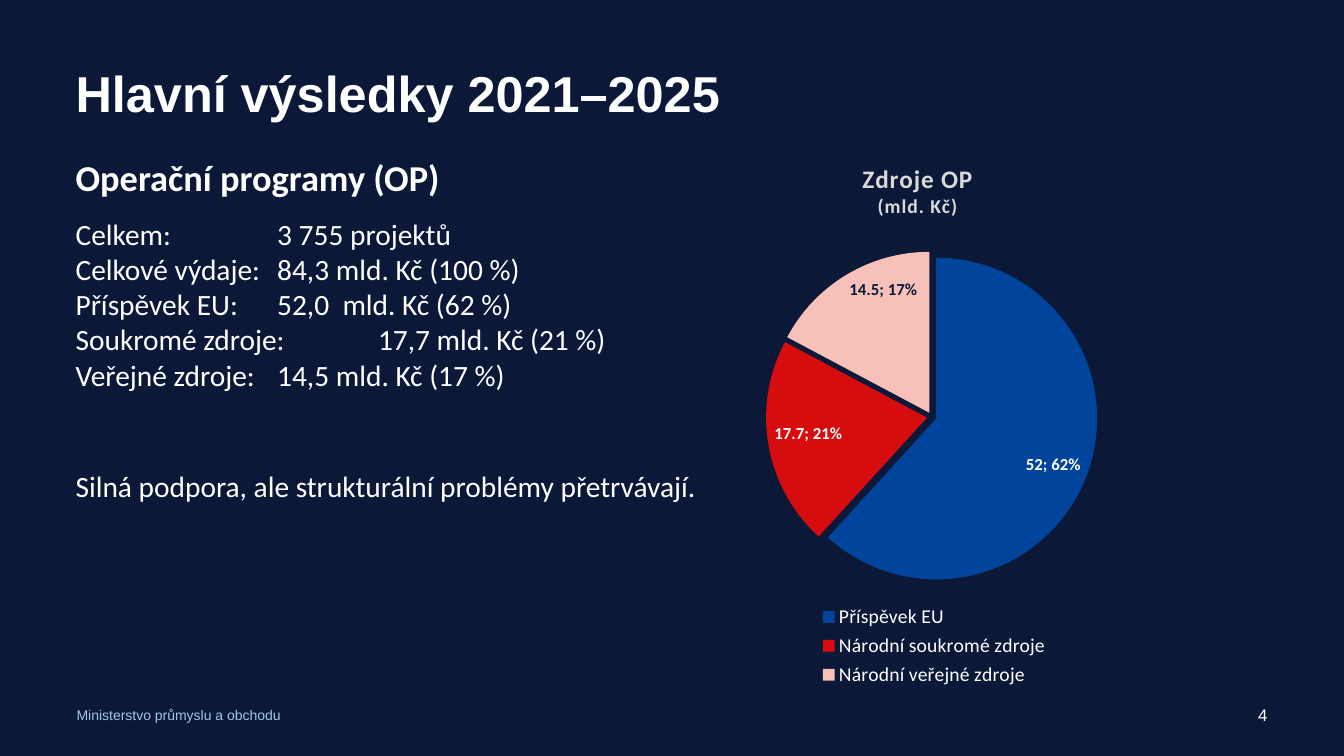
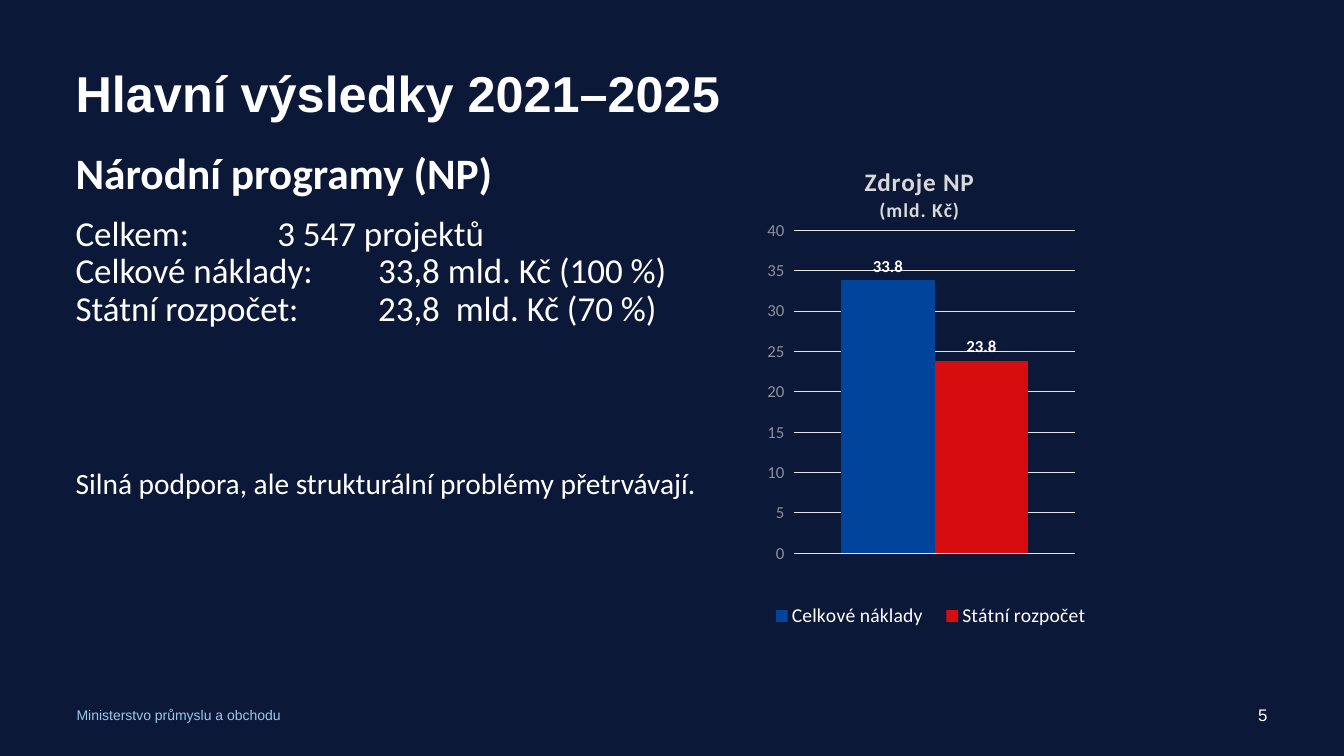
from lxml import etree
from pptx import Presentation
from pptx.chart.data import CategoryChartData
from pptx.dml.color import RGBColor
from pptx.enum.chart import (XL_CHART_TYPE, XL_LABEL_POSITION,
                             XL_LEGEND_POSITION, XL_TICK_MARK)
from pptx.enum.text import MSO_ANCHOR, PP_ALIGN
from pptx.oxml.ns import qn
from pptx.util import Inches, Pt

NAVY = RGBColor(0x0C, 0x18, 0x38)
WHITE = RGBColor(0xFF, 0xFF, 0xFF)
SKY = RGBColor(0x9D, 0xC8, 0xE9)
BLUE = RGBColor(0x00, 0x45, 0x9B)
RED = RGBColor(0xD7, 0x0C, 0x0F)
PINK = RGBColor(0xF7, 0xC1, 0xB9)
TITLE_GREY = RGBColor(0xD9, 0xD9, 0xD9)
AXIS_GREY = RGBColor(0x8D, 0x91, 0x9B)
GRID_GREY = RGBColor(0xE5, 0xE6, 0xE8)
TEXT_GREY = RGBColor(0x54, 0x58, 0x60)

CONCLUSION = "Silná podpora, ale strukturální problémy přetrvávají."
SLIDES = [
    dict(number=4, box=(0.75, 1.54, 6.53, 5.28), spacing=1.0,
         heading="Operační programy (OP)", heading_size=26, row_size=21, gap=54,
         rows=["Celkem: \t3 755 projektů",
               "Celkové výdaje: \t84,3 mld. Kč (100 %)",
               "Příspěvek EU: \t52,0  mld. Kč (62 %)",
               "Soukromé zdroje: \t17,7 mld. Kč (21 %)",
               "Veřejné zdroje: \t14,5 mld. Kč (17 %)"],
         kind=XL_CHART_TYPE.PIE, chart_at=(6.95, 1.41, 4.63, 5.68),
         chart_title="Zdroje OP",
         categories=["Příspěvek EU", "Národní soukromé zdroje",
                     "Národní veřejné zdroje"],
         series=[("Series 1", [52, 17.7, 14.5])],
         title_layout=(0.34, 0.03), plot_layout=(0.14, 0.17, 0.71, 0.62),
         legend_layout=(0.24, 0.8, 0.52, 0.16)),
    dict(number=5, box=(0.75, 1.51, 6.45, 3.75), spacing=0.9,
         heading="Národní programy (NP)", heading_size=31, row_size=25, gap=100,
         rows=["Celkem: \t3 547 projektů",
               "Celkové náklady: \t33,8 mld. Kč (100 %)",
               "Státní rozpočet: \t23,8  mld. Kč (70 %)"],
         kind=XL_CHART_TYPE.COLUMN_CLUSTERED, chart_at=(7.33, 1.51, 3.92, 5.17),
         chart_title="Zdroje NP", categories=["1"],
         series=[("Celkové náklady", [33.8]), ("Státní rozpočet", [23.8])],
         title_layout=(0.31, 0.02), plot_layout=(0.14, 0.15, 0.71, 0.62),
         legend_layout=(0.05, 0.86, 0.87, 0.06)),
]


def add_text(slide, box, lines, font="Arial", anchor=MSO_ANCHOR.TOP):
    """Add a text box; each line is (text, size, colour, bold)."""
    tf = slide.shapes.add_textbox(*map(Inches, box)).text_frame
    tf.word_wrap = True
    tf.vertical_anchor = anchor
    tf.margin_left = tf.margin_right = tf.margin_top = tf.margin_bottom = 0
    for i, (text, size, color, bold) in enumerate(lines):
        p = tf.add_paragraph() if i else tf.paragraphs[0]
        p.text = text
        if "\t" in text:
            tabs = etree.SubElement(p._p.get_or_add_pPr(), qn("a:tabLst"))
            for stop in (2, 3):
                etree.SubElement(tabs, qn("a:tab"), pos=str(Inches(stop)), algn="l")
        p.font.name, p.font.size, p.font.bold = font, Pt(size), bold
        p.font.color.rgb = color
    return tf.paragraphs


def set_layout(part, index, values, inner=False):
    """Place a chart part by fractions of the chart; index is the layout's slot."""
    for old in part.findall(qn("c:layout")):
        part.remove(old)
    layout = etree.Element(qn("c:layout"))
    manual = etree.SubElement(layout, qn("c:manualLayout"))
    if inner:
        etree.SubElement(manual, qn("c:layoutTarget"), val="inner")
    for name in ("xMode", "yMode"):
        etree.SubElement(manual, qn("c:" + name), val="edge")
    for name, value in zip("xywh", values):
        etree.SubElement(manual, qn("c:" + name), val=str(value))
    part.insert(index, layout)


prs = Presentation()
prs.slide_width, prs.slide_height = Inches(13.33), Inches(7.5)
fill = prs.slide_master.background.fill
fill.solid()
fill.fore_color.rgb = NAVY

for d in SLIDES:
    s = prs.slides.add_slide(prs.slide_layouts[6])

    # Title, footer and slide number
    p = add_text(s, (0.75, 0.68, 10.83, 0.66),
                 [("Hlavní výsledky 2021–2025", 36, WHITE, True)])[0]
    p.line_spacing = 0.9
    add_text(s, (0.76, 6.89, 4.32, 0.4),
             [("Ministerstvo průmyslu a obchodu", 10, SKY, False)],
             anchor=MSO_ANCHOR.MIDDLE)
    p = add_text(s, (9.57, 6.89, 3, 0.4), [(str(d["number"]), 12, WHITE, False)],
                 anchor=MSO_ANCHOR.MIDDLE)[0]
    p.alignment = PP_ALIGN.RIGHT

    # Results
    lines = [(d["heading"], d["heading_size"], WHITE, True)]
    lines += [(row, d["row_size"], WHITE, False) for row in d["rows"]]
    lines.append((CONCLUSION, 21, WHITE, False))
    paragraphs = add_text(s, d["box"], lines, font="Calibri")
    for p in paragraphs:
        p.line_spacing = d["spacing"]
    paragraphs[0].space_after = Pt(12)
    paragraphs[-1].space_before = Pt(d["gap"])

    # Chart with its title and legend
    data = CategoryChartData()
    data.categories = d["categories"]
    for name, values in d["series"]:
        data.add_series(name, values)
    chart = s.shapes.add_chart(d["kind"], *map(Inches, d["chart_at"]), data).chart
    chart.font.name, chart.font.size = "Calibri", Pt(10)
    chart.font.color.rgb = TEXT_GREY
    tf = chart.chart_title.text_frame
    for p, text, size in ((tf.paragraphs[0], d["chart_title"], 18),
                          (tf.add_paragraph(), "(mld. Kč)", 14)):
        r = p.add_run()
        r.text = text
        r.font.name, r.font.size, r.font.bold = "Calibri", Pt(size), True
        r.font.color.rgb = TITLE_GREY
        r.font._element.set("spc", "60")
    chart.has_legend = True
    legend = chart.legend
    legend.position = XL_LEGEND_POSITION.TOP
    legend.include_in_layout = False
    legend.font.name, legend.font.size = "Calibri", Pt(14)
    legend.font.color.rgb = WHITE

    # Placement of the chart parts
    root = chart._chartSpace
    set_layout(root.find(".//" + qn("c:title")), 1, d["title_layout"])
    set_layout(root.find(".//" + qn("c:legend")), 1, d["legend_layout"])
    set_layout(root.find(".//" + qn("c:plotArea")), 0, d["plot_layout"], inner=True)

    # Series labels
    is_pie = d["kind"] == XL_CHART_TYPE.PIE
    plot = chart.plots[0]
    plot.vary_by_categories = is_pie
    for series, color in zip(plot.series, (BLUE, RED)):
        labels = series.data_labels
        labels.show_value = True
        labels.show_percentage = is_pie
        labels.position = (XL_LABEL_POSITION.INSIDE_END if is_pie
                           else XL_LABEL_POSITION.OUTSIDE_END)
        labels.font.name, labels.font.size, labels.font.bold = "Calibri", Pt(12), True
        labels.font.color.rgb = WHITE
        if not is_pie:
            series.format.fill.solid()
            series.format.fill.fore_color.rgb = color

    if is_pie:
        # Slices, pulled slightly apart
        series = plot.series[0]
        explosion = etree.Element(qn("c:explosion"), val="3")
        root.find(".//" + qn("c:ser") + "/" + qn("c:tx")).addnext(explosion)
        for i, color in enumerate((BLUE, RED, PINK)):
            fill = series.points[i].format.fill
            fill.solid()
            fill.fore_color.rgb = color
        label = series.points[2].data_label
        label.font.name, label.font.size, label.font.bold = "Calibri", Pt(12), True
        label.font.color.rgb = NAVY
        label.position = XL_LABEL_POSITION.INSIDE_END
        for show in root.iter(qn("c:showPercent")):
            show.set("val", "1")
        for show in list(root.iter(qn("c:showBubbleSize"))):
            separator = etree.Element(qn("c:separator"))
            separator.text = "; "
            show.addnext(separator)
    else:
        # Columns and axes
        plot.gap_width, plot.overlap = 100, 0
        chart.category_axis.visible = False
        axis = chart.value_axis
        axis.minimum_scale, axis.maximum_scale, axis.major_unit = 0, 40, 5
        axis.major_tick_mark = XL_TICK_MARK.OUTSIDE
        axis.format.line.fill.background()
        axis.major_gridlines.format.line.color.rgb = GRID_GREY
        axis.major_gridlines.format.line.width = Pt(0.75)
        font = axis.tick_labels.font
        font.name, font.size = "Calibri", Pt(12)
        font.color.rgb = AXIS_GREY

prs.save("out.pptx")
